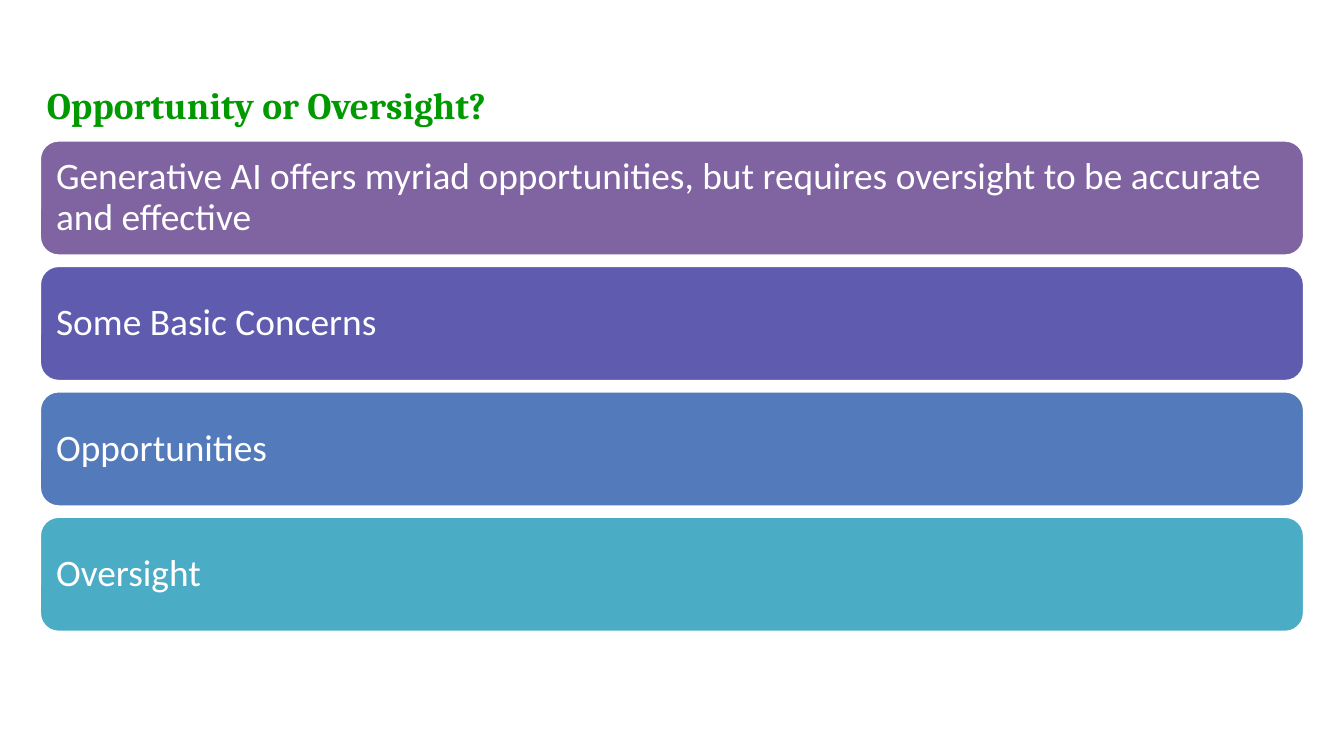
from dataclasses import dataclass

from pptx import Presentation
from pptx.dml.color import RGBColor
from pptx.enum.shapes import MSO_SHAPE
from pptx.enum.text import MSO_ANCHOR, PP_ALIGN
from pptx.slide import Slide
from pptx.text.text import TextFrame
from pptx.util import Pt

ROUNDED = MSO_SHAPE.ROUNDED_RECTANGLE
TOP, MIDDLE = MSO_ANCHOR.TOP, MSO_ANCHOR.MIDDLE
LEFT = PP_ALIGN.LEFT
BLANK_LAYOUT = 6


@dataclass(frozen=True)
class Theme:
    title_color: str = "009900"
    white: str = "FFFFFF"
    title_font: str = "Cambria"
    body_font: str = "Calibri"
    text_size: float = 20


@dataclass(frozen=True)
class Bar:
    text: str
    color: str


THEME = Theme()
BARS = [
    Bar("Generative AI offers myriad opportunities, but requires oversight "
        "to be accurate and effective", "8064A2"),
    Bar("Some Basic Concerns", "5F5BAE"),
    Bar("Opportunities", "537ABA"),
    Bar("Oversight", "4BACC6"),
]

# Bar stack, in points
BAR_LEFT, BAR_TOP = 21, 74.9
BAR_WIDTH, BAR_HEIGHT = 678, 62.4
BAR_PITCH = 67.2


def write_text(frame: TextFrame, text: str, *, font: str, color: str,
               bold: bool = False, anchor: MSO_ANCHOR = TOP,
               line_spacing: float = 1.0) -> None:
    frame.word_wrap = True
    frame.vertical_anchor = anchor
    paragraph = frame.paragraphs[0]
    paragraph.alignment = LEFT
    paragraph.line_spacing = line_spacing
    run = paragraph.add_run()
    run.text = text
    run.font.name = font
    run.font.size = Pt(THEME.text_size)
    run.font.bold = bold
    run.font.color.rgb = RGBColor.from_string(color)


def draw_title(slide: Slide, text: str) -> None:
    box = slide.shapes.add_textbox(Pt(18), Pt(40.3), Pt(516), Pt(54))
    write_text(box.text_frame, text, font=THEME.title_font,
               color=THEME.title_color, bold=True)


def draw_bar(slide: Slide, bar: Bar, top: float) -> None:
    shape = slide.shapes.add_shape(
        ROUNDED, Pt(BAR_LEFT), Pt(top), Pt(BAR_WIDTH), Pt(BAR_HEIGHT))
    shape.shadow.inherit = False
    shape.fill.solid()
    shape.fill.fore_color.rgb = RGBColor.from_string(bar.color)
    shape.line.color.rgb = RGBColor.from_string(THEME.white)
    shape.line.width = Pt(2)
    frame = shape.text_frame
    frame.margin_left = frame.margin_right = Pt(6)
    frame.margin_top = frame.margin_bottom = Pt(6)
    write_text(frame, bar.text, font=THEME.body_font, color=THEME.white,
               anchor=MIDDLE, line_spacing=0.9)


def main() -> None:
    presentation = Presentation()
    presentation.slide_width, presentation.slide_height = Pt(720), Pt(405)
    slide = presentation.slides.add_slide(
        presentation.slide_layouts[BLANK_LAYOUT])

    # Heading
    draw_title(slide, "Opportunity or Oversight?")

    # Evenly spaced agenda bars
    for index, bar in enumerate(BARS):
        draw_bar(slide, bar, BAR_TOP + index * BAR_PITCH)

    presentation.save("out.pptx")


if __name__ == "__main__":
    main()
